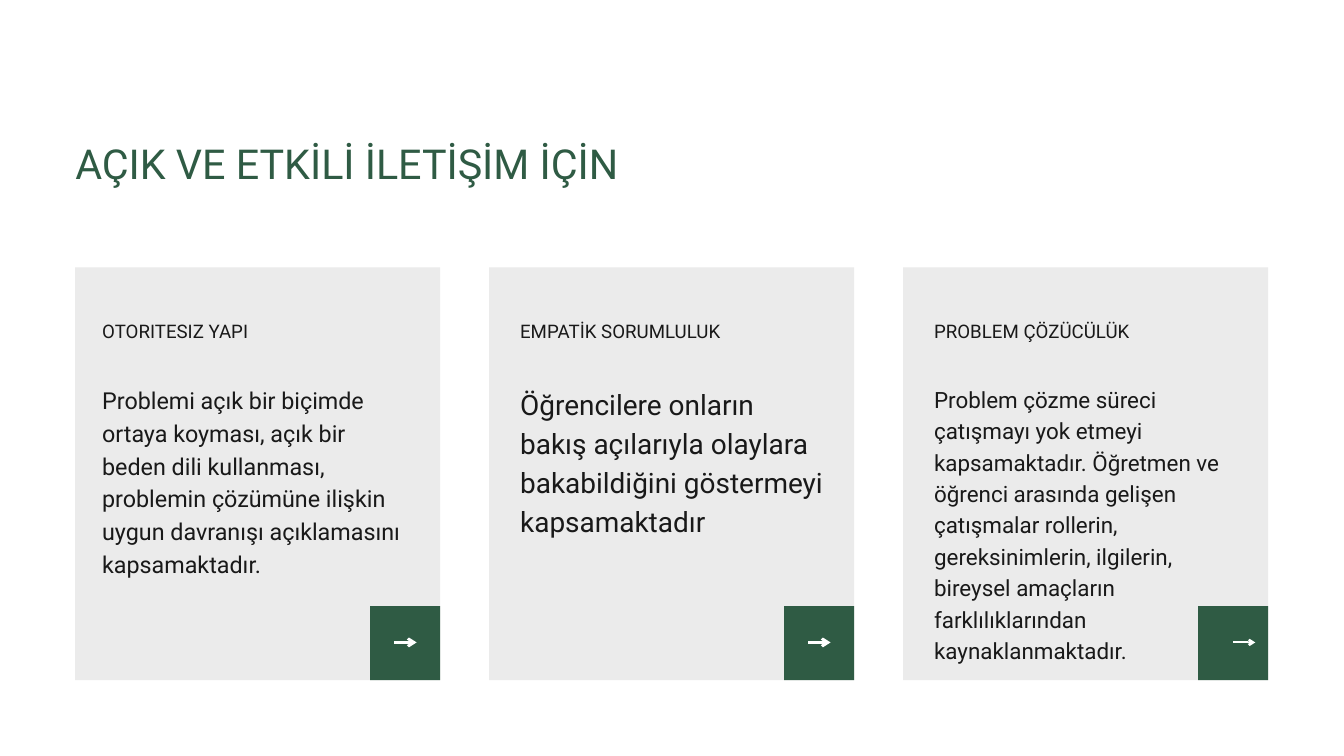
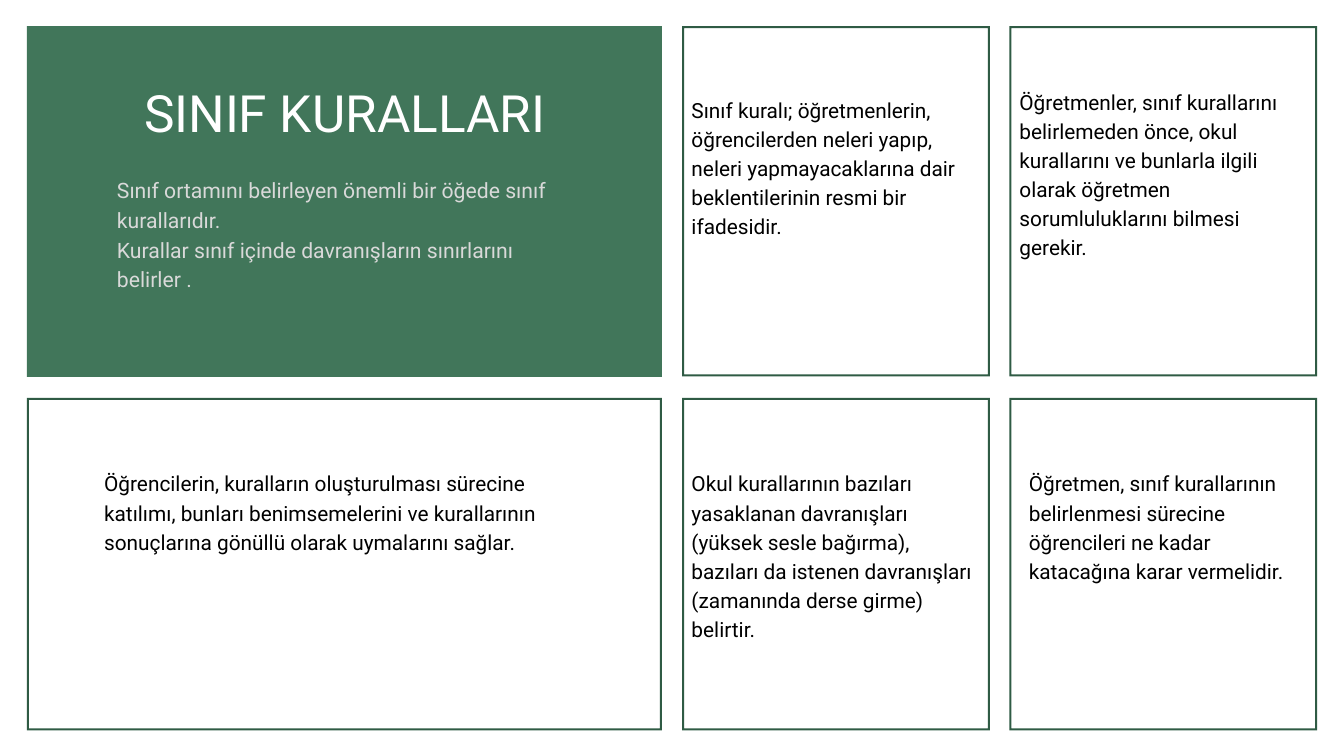
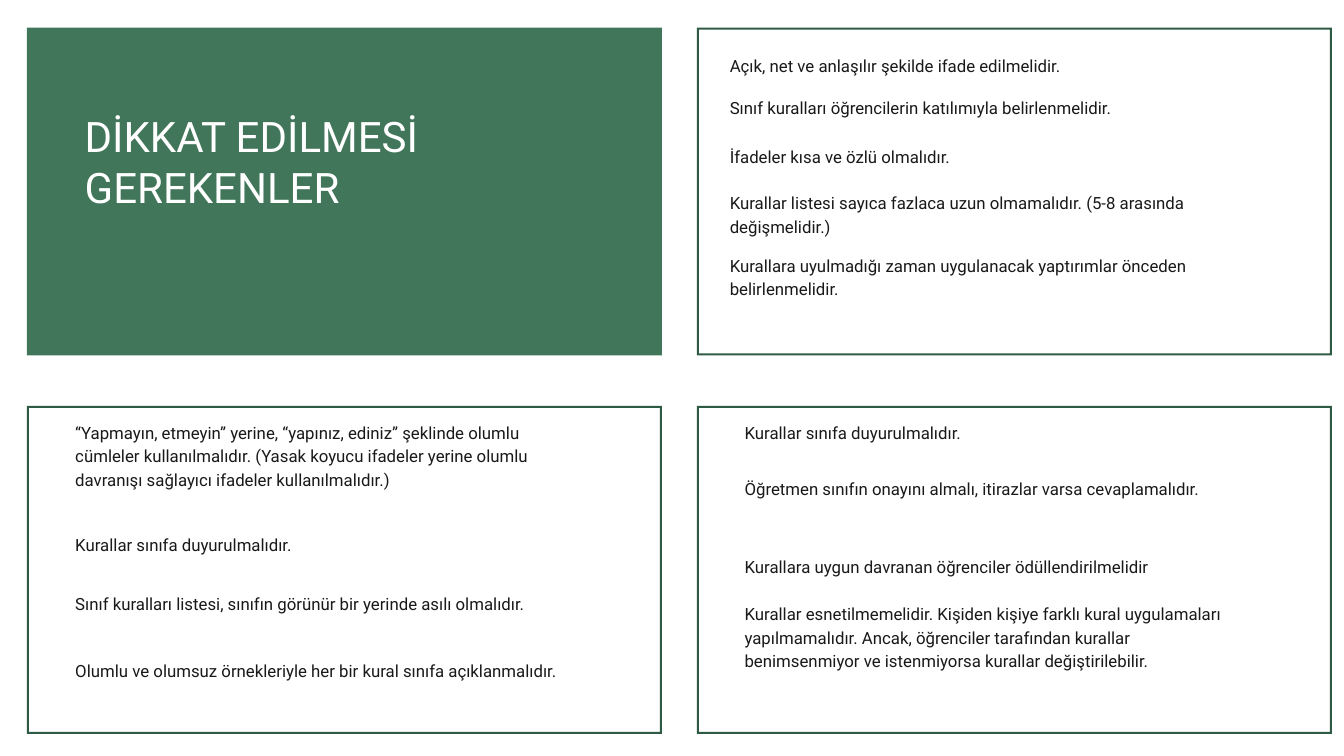
from lxml.etree import SubElement
from pptx import Presentation
from pptx.dml.color import RGBColor
from pptx.enum.shapes import MSO_CONNECTOR, MSO_SHAPE
from pptx.enum.text import MSO_ANCHOR, MSO_AUTO_SIZE, PP_ALIGN
from pptx.oxml.ns import qn
from pptx.util import Inches, Pt

FONT = "Roboto"
DARK_GREEN = "2F5B44"
GREEN = "41765A"
CARD_GRAY = "EBEBEB"
PALE_GRAY = "D9D9D9"
INK = "191919"
BLACK = "000000"
WHITE = "FFFFFF"
FRAME_WIDTH = 0.03
PANEL_LEFT, PANEL_WIDTH = 0.4, 9.45


def color(value):
    """Turn a hex string into a colour."""
    return RGBColor.from_string(value)


def place(shape, left, top, width, height):
    """Move and size a shape, in inches."""
    shape.left, shape.top = Inches(left), Inches(top)
    shape.width, shape.height = Inches(width), Inches(height)


def write(shape, text, size, spacing, ink, align=PP_ALIGN.LEFT):
    """Fill a shape with text in the deck's font, without margins."""
    frame = shape.text_frame
    frame.text = text
    frame.word_wrap = True
    frame.auto_size = MSO_AUTO_SIZE.NONE
    frame.vertical_anchor = MSO_ANCHOR.TOP
    frame.margin_left = frame.margin_right = 0
    frame.margin_top = frame.margin_bottom = 0
    for para in frame.paragraphs:
        para.alignment = align
        para.line_spacing = Pt(spacing)
        para.space_before = Pt(0)
        for span in para.runs:
            span.font.name = FONT
            span.font.size = Pt(size)
            span.font.color.rgb = color(ink)


def add_text(slide, area, text, size, spacing, ink=INK):
    """Add a text box."""
    box = slide.shapes.add_textbox(*map(Inches, area))
    write(box, text, size, spacing, ink)


def add_title(slide, area, text, size, spacing, ink=WHITE, align=PP_ALIGN.LEFT):
    """Place the title above the panels drawn so far."""
    title = slide.shapes.title
    place(title, *area)
    write(title, text, size, spacing, ink, align)
    slide.shapes.element.append(title.element)


def add_body(slide, area, text, size, spacing, ink):
    """Place the body text, unbulleted, above the panels drawn so far."""
    body = slide.placeholders[1]
    place(body, *area)
    write(body, text, size, spacing, ink)
    for para in body.text_frame.paragraphs:
        properties = para._p.get_or_add_pPr()
        properties.set("marL", "0")
        properties.set("indent", "0")
        SubElement(properties, qn("a:buNone"))
    slide.shapes.element.append(body.element)


def add_panel(slide, area, fill, kind=MSO_SHAPE.RECTANGLE):
    """Add a flat filled shape."""
    panel = slide.shapes.add_shape(kind, *map(Inches, area))
    panel.shadow.inherit = False
    panel.fill.solid()
    panel.fill.fore_color.rgb = color(fill)
    panel.line.fill.background()
    return panel


def add_frame(slide, area):
    """Add a thin green frame."""
    frame = add_panel(slide, area, DARK_GREEN, MSO_SHAPE.FRAME)
    frame.adjustments[0] = FRAME_WIDTH / min(area[2:])


def add_arrow(slide, left, top, length, weight):
    """Add a white arrow pointing right."""
    arrow = slide.shapes.add_connector(
        MSO_CONNECTOR.STRAIGHT,
        Inches(left), Inches(top), Inches(left + length), Inches(top))
    arrow.line.color.rgb = color(WHITE)
    arrow.line.width = Pt(weight)
    SubElement(arrow.line._get_or_add_ln(), qn("a:tailEnd"), type="arrow")
    SubElement(arrow.element.spPr, qn("a:effectLst"))


def add_card(slide, left, indent, heading, text, size, arrow_offset, arrow_weight):
    """Add a gray card with heading, text and an arrow in its corner."""
    tab_left = left + 4.39
    add_panel(slide, (left, 3.98, 5.43, 6.14), CARD_GRAY)
    add_panel(slide, (tab_left, 9.02, 1.04, 1.1), DARK_GREEN)
    add_arrow(slide, tab_left + arrow_offset, 9.56, 0.33, arrow_weight)
    add_text(slide, (left + indent, 5.68, 4.51, 4.1), text, size, size * 1.4)
    add_text(slide, (left + indent, 4.71, 4.51, 0.36), heading, 20, 28)


def build_communication(deck):
    """Build the slide on open communication."""
    slide = deck.slides.add_slide(deck.slide_layouts[5])
    add_title(slide, (1.12, 1.99, 11.59, 0.78), "AÇIK VE ETKİLİ İLETİŞİM İÇİN",
              44.2, 57.5, DARK_GREEN)
    cards = [
        (0.4, "OTORITESIZ YAPI",
         "Problemi açık bir biçimde ortaya koyması, açık bir beden dili kullanması, "
         "problemin çözümüne ilişkin uygun davranışı açıklamasını kapsamaktadır.",
         25, 0.36, 3),
        (0.46, "EMPATİK SORUMLULUK",
         "Öğrencilere onların bakış açılarıyla olaylara bakabildiğini göstermeyi "
         "kapsamaktadır",
         30, 0.36, 3),
        (0.46, "PROBLEM ÇÖZÜCÜLÜK",
         "Problem çözme süreci çatışmayı yok etmeyi kapsamaktadır. Öğretmen ve "
         "öğrenci arasında gelişen çatışmalar rollerin, gereksinimlerin, ilgilerin, "
         "bireysel amaçların farklılıklarından kaynaklanmaktadır.",
         24, 0.52, 2.25),
    ]
    for index, card in enumerate(cards):
        add_card(slide, 1.12 + index * 6.16, *card)


def build_rules(deck):
    """Build the slide on classroom rules."""
    slide = deck.slides.add_slide(deck.slide_layouts[1])
    columns = [(PANEL_LEFT, PANEL_WIDTH), (10.15, 4.58), (15.02, 4.58)]
    add_panel(slide, (PANEL_LEFT, 0.39, PANEL_WIDTH, 5.22), GREEN)
    for left, width in columns[1:]:
        add_frame(slide, (left, 0.39, width, 5.21))
    for left, width in columns:
        add_frame(slide, (left, 5.92, width, 4.95))
    add_title(slide, (1.26, 1.21, 7.74, 0.9), "SINIF KURALLARI", 55, 66,
              align=PP_ALIGN.CENTER)
    add_body(slide, (1.74, 2.58, 6.82, 2.17),
             "Sınıf ortamını belirleyen önemli bir öğede sınıf kurallarıdır.\n"
             "Kurallar sınıf içinde davranışların sınırlarını belirler .",
             22.7, 31.8, PALE_GRAY)
    rules = [
        (10.29, 1.39, 4.28,
         "Sınıf kuralı; öğretmenlerin, öğrencilerden neleri yapıp, neleri "
         "yapmayacaklarına dair beklentilerinin resmi bir ifadesidir."),
        (15.17, 1.27, 4.28,
         "Öğretmenler, sınıf kurallarını belirlemeden önce, okul kurallarını ve "
         "bunlarla ilgili olarak öğretmen sorumluluklarını bilmesi gerekir."),
        (1.55, 6.95, 6.7,
         "Öğrencilerin, kuralların oluşturulması sürecine katılımı, bunları "
         "benimsemelerini ve kurallarının sonuçlarına gönüllü olarak uymalarını "
         "sağlar."),
        (10.29, 6.95, 4.28,
         "Okul kurallarının bazıları yasaklanan davranışları (yüksek sesle "
         "bağırma), bazıları da istenen davranışları (zamanında derse girme) "
         "belirtir."),
        (15.31, 6.95, 4.28,
         "Öğretmen, sınıf kurallarının belirlenmesi sürecine öğrencileri ne kadar "
         "katacağına karar vermelidir."),
    ]
    for left, top, width, text in rules:
        add_text(slide, (left, top, width, 2.83), text, 22.3, 31.2, BLACK)


def build_considerations(deck):
    """Build the slide on points to watch when setting rules."""
    slide = deck.slides.add_slide(deck.slide_layouts[5])
    add_panel(slide, (PANEL_LEFT, 0.41, PANEL_WIDTH, 4.88), GREEN)
    for left, top in [(10.37, 0.41), (PANEL_LEFT, 6.04), (10.37, 6.04)]:
        add_frame(slide, (left, top, PANEL_WIDTH, 4.88))
    add_title(slide, (1.26, 1.65, 7.74, 1.5), "DİKKAT EDİLMESİ GEREKENLER", 45, 54)
    groups = {
        10.86: [
            (0.78, 0.67, "Açık, net ve anlaşılır şekilde ifade edilmelidir."),
            (1.41, 1.01, "Sınıf kuralları öğrencilerin katılımıyla belirlenmelidir."),
            (2.13, 1.01, "İfadeler kısa ve özlü olmalıdır."),
            (2.82, 1.36, "Kurallar listesi sayıca fazlaca uzun olmamalıdır. "
                         "(5-8 arasında değişmelidir.)"),
            (3.75, 1.36, "Kurallara uyulmadığı zaman uygulanacak yaptırımlar "
                         "önceden belirlenmelidir."),
        ],
        1.12: [
            (6.24, 1.7, "“Yapmayın, etmeyin” yerine, “yapınız, ediniz” şeklinde "
                        "olumlu cümleler kullanılmalıdır. (Yasak koyucu ifadeler "
                        "yerine olumlu davranışı sağlayıcı ifadeler "
                        "kullanılmalıdır.)"),
            (7.91, 0.67, "Kurallar sınıfa duyurulmalıdır."),
            (8.79, 1.01, "Sınıf kuralları listesi, sınıfın görünür bir yerinde "
                         "asılı olmalıdır."),
            (9.78, 1.01, "Olumlu ve olumsuz örnekleriyle her bir kural sınıfa "
                         "açıklanmalıdır."),
        ],
        11.08: [
            (6.24, 0.67, "Kurallar sınıfa duyurulmalıdır."),
            (7.07, 1.01, "Öğretmen sınıfın onayını almalı, itirazlar varsa "
                         "cevaplamalıdır."),
            (8.23, 0.67, "Kurallara uygun davranan öğrenciler ödüllendirilmelidir"),
            (8.94, 1.7, "Kurallar esnetilmemelidir. Kişiden kişiye farklı kural "
                        "uygulamaları yapılmamalıdır. Ancak, öğrenciler tarafından "
                        "kurallar benimsenmiyor ve istenmiyorsa kurallar "
                        "değiştirilebilir."),
        ],
    }
    for left, points in groups.items():
        for top, height, text in points:
            add_text(slide, (left, top, 7.17, height), text, 18, 25.2)


def main():
    """Build the deck and save it."""
    deck = Presentation()
    deck.slide_width, deck.slide_height = Inches(20), Inches(11.25)
    build_communication(deck)
    build_rules(deck)
    build_considerations(deck)
    deck.save("out.pptx")


if __name__ == "__main__":
    main()
